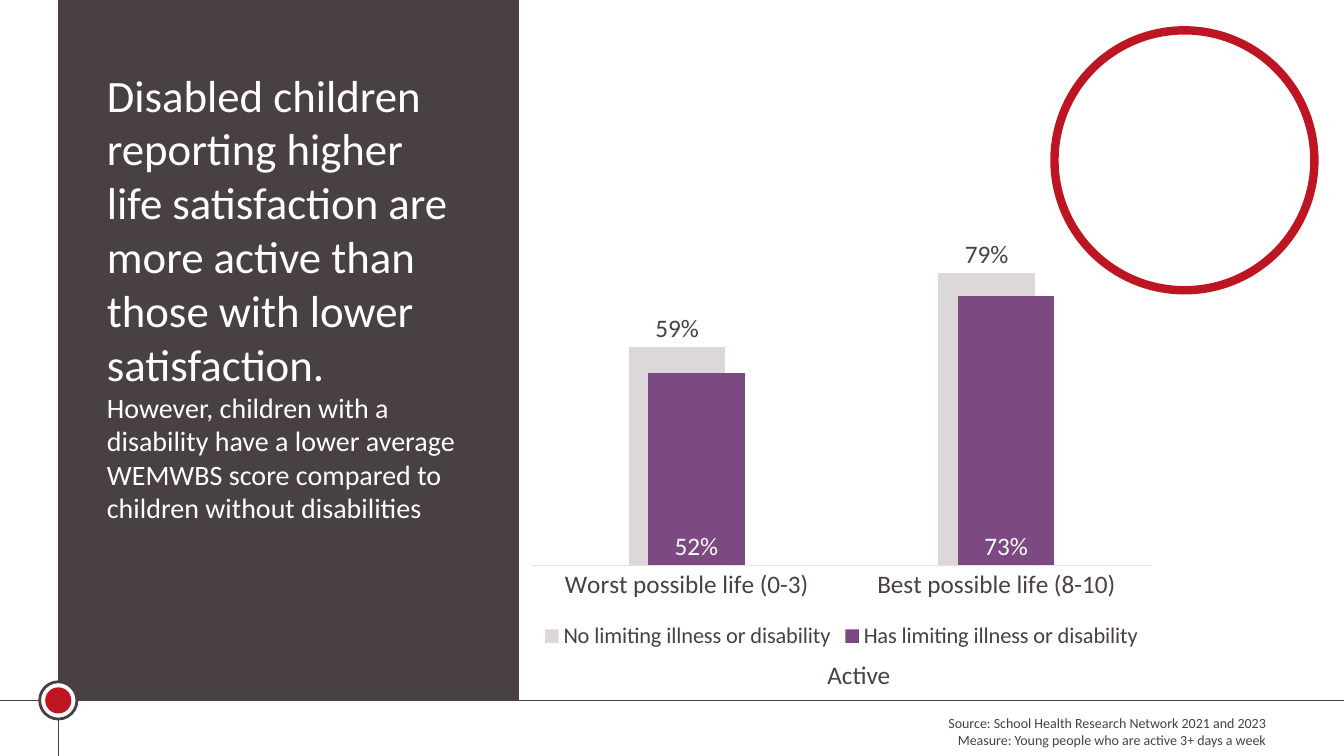
from lxml.etree import SubElement
from pptx import Presentation
from pptx.chart.data import CategoryChartData
from pptx.dml.color import RGBColor
from pptx.enum.chart import XL_CHART_TYPE, XL_LABEL_POSITION, XL_LEGEND_POSITION, XL_TICK_MARK
from pptx.enum.shapes import MSO_CONNECTOR, MSO_SHAPE
from pptx.enum.text import MSO_ANCHOR, MSO_AUTO_SIZE, PP_ALIGN
from pptx.oxml import parse_xml
from pptx.oxml.ns import nsdecls, qn
from pptx.util import Cm, Pt

COLOURS = {"dark": "484043", "red": "BD1622", "white": "FFFFFF",
           "grey": "DCD7D9", "purple": "7C4982", "axis": "E5E1E3"}
FONT = "Calibri"
SLIDE_WIDTH, SLIDE_HEIGHT = 33.87, 19.05
RULE_X, RULE_Y = 1.47, 17.65


def colour(name):
    return RGBColor.from_string(COLOURS[name])


def format_font(font, size, colour_name):
    for attribute, value in {"name": FONT, "size": Pt(size), "bold": False}.items():
        setattr(font, attribute, value)
    font.color.rgb = colour(colour_name)


def add_filled(slide, preset, box, fill, line=None, width=0):
    shape = slide.shapes.add_shape(preset, *map(Cm, box))
    shape.shadow.inherit = False
    shape.fill.solid()
    shape.fill.fore_color.rgb = colour(fill)
    if line:
        shape.line.color.rgb = colour(line)
        shape.line.width = Pt(width)
    else:
        shape.line.fill.background()


def add_circle(slide, centre_x, centre_y, diameter, *style):
    box = (centre_x - diameter / 2, centre_y - diameter / 2, diameter, diameter)
    add_filled(slide, MSO_SHAPE.OVAL, box, *style)


def add_rule(slide, *ends):
    connector = slide.shapes.add_connector(MSO_CONNECTOR.STRAIGHT, *map(Cm, ends))
    connector.line.color.rgb = colour("dark")
    connector.line.width = Pt(1)
    SubElement(connector._element.spPr, qn("a:effectLst"))


def write_text(shape, lines, colour_name, alignment=PP_ALIGN.LEFT):
    """Fill a text shape with (text, size) paragraphs."""
    frame = shape.text_frame
    for attribute, value in {"word_wrap": True, "auto_size": MSO_AUTO_SIZE.NONE,
                             "vertical_anchor": MSO_ANCHOR.TOP}.items():
        setattr(frame, attribute, value)
    for index, (text, size) in enumerate(lines):
        paragraph = frame.add_paragraph() if index else frame.paragraphs[0]
        paragraph.alignment = alignment
        run = paragraph.add_run()
        run.text = text
        format_font(run.font, size, colour_name)


def add_text(slide, box, *text):
    write_text(slide.shapes.add_textbox(*map(Cm, box)), *text)


def add_frame(slide):
    # Side panel, crossing rules and the node where they meet
    add_filled(slide, MSO_SHAPE.RECTANGLE, (RULE_X, 0, 11.61, RULE_Y), "dark")
    add_rule(slide, RULE_X, 0, RULE_X, SLIDE_HEIGHT)
    add_rule(slide, 0, RULE_Y, SLIDE_WIDTH, RULE_Y)
    add_circle(slide, RULE_X, RULE_Y, 0.94, "white", "dark", 2)
    add_circle(slide, RULE_X, RULE_Y, 0.66, "red")
    # Large ring, top right
    add_circle(slide, 29.85, 4.04, 6.55, "white", "red", 6)


def add_message(slide, box):
    title = slide.shapes.title
    for attribute, value in zip(("left", "top", "width", "height"), box):
        setattr(title, attribute, Cm(value))
    write_text(title, [
        ("Disabled children reporting higher life satisfaction are more active "
         "than those with lower satisfaction.", 32),
        ("However, children with a disability have a lower average WEMWBS score "
         "compared to children without disabilities", 20)], "white")
    # Bring the title in front of the panel
    slide.shapes._spTree.append(title._element)


def add_activity_chart(slide, box):
    data = CategoryChartData(number_format="0%")
    data.categories = ["Worst possible life (0-3)", "Best possible life (8-10)"]
    data.add_series("No limiting illness or disability", (0.59, 0.79))
    data.add_series("Has limiting illness or disability", (0.52, 0.73))
    chart = slide.shapes.add_chart(
        XL_CHART_TYPE.COLUMN_CLUSTERED, *map(Cm, box), data).chart
    chart.has_title = False
    format_font(chart.font, 18, "dark")

    # Legend
    chart.has_legend = True
    chart.legend.position = XL_LEGEND_POSITION.BOTTOM
    chart.legend.include_in_layout = False
    format_font(chart.legend.font, 16, "dark")

    # Axes
    category_axis, value_axis = chart.category_axis, chart.value_axis
    category_axis.major_tick_mark = XL_TICK_MARK.NONE
    category_axis.format.line.color.rgb = colour("axis")
    category_axis.format.line.width = Pt(0.75)
    format_font(category_axis.tick_labels.font, 18, "dark")
    for attribute, value in {"minimum_scale": 0, "maximum_scale": 1,
                             "has_major_gridlines": False, "visible": False}.items():
        setattr(value_axis, attribute, value)

    # Bars and their labels
    plot = chart.plots[0]
    for attribute, value in {"gap_width": 200, "overlap": 80,
                             "vary_by_categories": False}.items():
        setattr(plot, attribute, value)
    styles = [("grey", "dark", XL_LABEL_POSITION.OUTSIDE_END),
              ("purple", "white", XL_LABEL_POSITION.INSIDE_BASE)]
    for series, (fill, label_colour, position) in zip(plot.series, styles):
        series.format.fill.solid()
        series.format.fill.fore_color.rgb = colour(fill)
        labels = series.data_labels
        for attribute, value in {"show_value": True, "number_format": "0%",
                                 "number_format_is_linked": False,
                                 "position": position}.items():
            setattr(labels, attribute, value)
        format_font(labels.font, 18, label_colour)

    # Fixed plot area inside the chart
    plot_area = chart._chartSpace.chart.plotArea
    for layout in plot_area.findall(qn("c:layout")):
        plot_area.remove(layout)
    places = {"x": 0.02, "y": 0.02, "w": 0.96, "h": 0.79}
    plot_area.insert(0, parse_xml(
        f'<c:layout {nsdecls("c")}><c:manualLayout><c:layoutTarget val="inner"/>'
        '<c:xMode val="edge"/><c:yMode val="edge"/>'
        + "".join(f'<c:{key} val="{value}"/>' for key, value in places.items())
        + "</c:manualLayout></c:layout>"))


def main():
    presentation = Presentation()
    presentation.slide_width = Cm(SLIDE_WIDTH)
    presentation.slide_height = Cm(SLIDE_HEIGHT)
    slide = presentation.slides.add_slide(presentation.slide_layouts[5])
    add_frame(slide)
    add_text(slide, (15.72, 17.88, 16.43, 1.12),
             [("Source: School Health Research Network 2021 and 2023", 10),
              ("Measure: Young people who are active 3+ days a week", 10)],
             "dark", PP_ALIGN.RIGHT)
    add_message(slide, (2.44, 1.57, 9.4, 11.89))
    add_text(slide, (20.6, 16.48, 3.1, 1.02), [("Active", 18)], "dark")
    add_activity_chart(slide, (13.08, 4.7, 16.26, 11.79))
    presentation.save("out.pptx")


if __name__ == "__main__":
    main()
